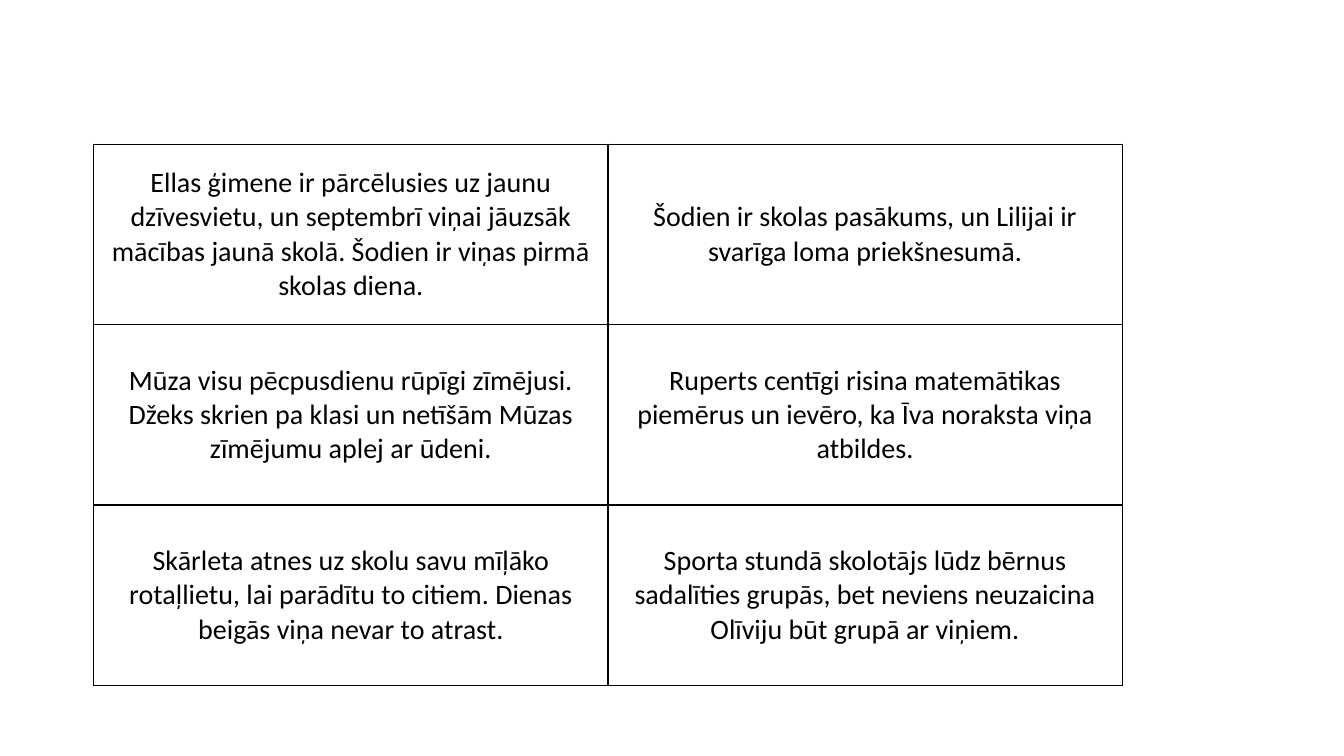
from lxml.etree import SubElement
from pptx import Presentation
from pptx.dml.color import RGBColor
from pptx.enum.text import MSO_ANCHOR as Anchor, PP_ALIGN as Align
from pptx.oxml.ns import qn
from pptx.util import Inches, Pt

LEFT, TOP = 0.93, 1.43
COL_W, ROW_H = 5.1, 1.79
INK, PAPER = "000000", "FFFFFF"

SITUATIONS = [
    ("Ellas ģimene ir pārcēlusies uz jaunu dzīvesvietu, un septembrī viņai "
     "jāuzsāk mācības jaunā skolā. Šodien ir viņas pirmā skolas diena.",
     "Šodien ir skolas pasākums, un Lilijai ir svarīga loma priekšnesumā."),
    ("Mūza visu pēcpusdienu rūpīgi zīmējusi. Džeks skrien pa klasi un "
     "netīšām Mūzas zīmējumu aplej ar ūdeni.",
     "Ruperts centīgi risina matemātikas piemērus un ievēro, ka Īva "
     "noraksta viņa atbildes."),
    ("Skārleta atnes uz skolu savu mīļāko rotaļlietu, lai parādītu to "
     "citiem. Dienas beigās viņa nevar to atrast.",
     "Sporta stundā skolotājs lūdz bērnus sadalīties grupās, bet neviens "
     "neuzaicina Olīviju būt grupā ar viņiem."),
]


def color(value):
    return RGBColor.from_string(value)


def add_borders(cell):
    tc_pr = cell._tc.get_or_add_tcPr()
    for side in ("lnL", "lnR", "lnT", "lnB"):
        ln = SubElement(tc_pr, qn(f"a:{side}"), w=str(Pt(1)))
        fill = SubElement(ln, qn("a:solidFill"))
        SubElement(fill, qn("a:srgbClr"), val=INK)


def fill_cell(cell, text):
    add_borders(cell)
    cell.fill.solid()
    cell.fill.fore_color.rgb = color(PAPER)
    cell.vertical_anchor = Anchor.MIDDLE
    p = cell.text_frame.paragraphs[0]
    p.alignment = Align.CENTER
    r = p.add_run()
    r.text = text
    r.font.name = "Calibri"
    r.font.size = Pt(20)
    r.font.bold = False
    r.font.color.rgb = color(INK)


def add_grid(s, rows):
    n_rows, n_cols = len(rows), len(rows[0])
    table = s.shapes.add_table(
        n_rows, n_cols, Inches(LEFT), Inches(TOP),
        Inches(COL_W * n_cols), Inches(ROW_H * n_rows)).table
    table.first_row = table.horz_banding = False
    for col in table.columns:
        col.width = Inches(COL_W)
    for i, texts in enumerate(rows):
        table.rows[i].height = Inches(ROW_H)
        for j, text in enumerate(texts):
            fill_cell(table.cell(i, j), text)


def main():
    prs = Presentation()
    prs.slide_width, prs.slide_height = Inches(13.33), Inches(7.5)
    s = prs.slides.add_slide(prs.slide_layouts[6])
    add_grid(s, SITUATIONS)
    prs.save("out.pptx")


if __name__ == "__main__":
    main()
